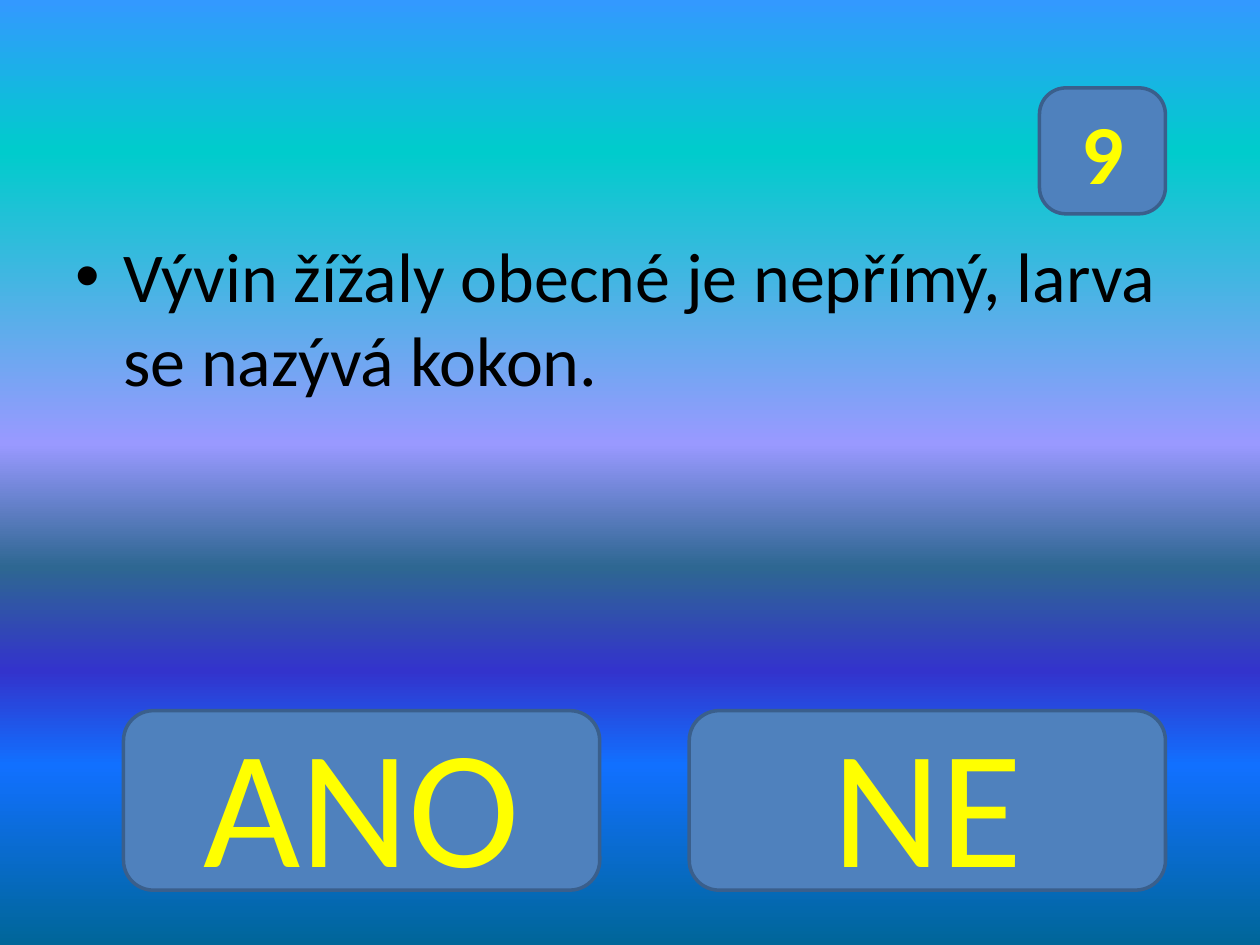
import dataclasses

import lxml.etree
import pptx
import pptx.dml.color
import pptx.enum.shapes
import pptx.enum.text
import pptx.oxml.ns
import pptx.util

WIDE, HIGH = 10, 7.5  # inches


@dataclasses.dataclass(frozen=True)
class Theme:
    font: str = "Calibri"
    ink: str = "000000"
    glow: str = "FFFF00"
    fill: str = "4F81BD"
    edge: str = "3A5F8C"
    line: float = 2
    body: int = 40
    mark: int = 48
    reply: int = 96
    sky: tuple = ((0, "3399FF"), (16, "00CCCC"), (47, "9999FF"), (60, "2E6792"),
                  (71, "3333CC"), (81, "1170FF"), (100, "006699"))


THEME = Theme()


def put(target, values):
    for name, value in values.items():
        setattr(target, name, value)


def color(code):
    return pptx.dml.color.RGBColor.from_string(code)


def add_xml(parent, tag, **values):
    return lxml.etree.SubElement(parent, pptx.oxml.ns.qn(tag), values)


def place(box):
    """Turn left, top, width and height as shares of the slide into lengths."""
    return [pptx.util.Inches(part * side) for part, side in zip(box, (WIDE, HIGH) * 2)]


def write(frame, text, size, code, bold=False):
    """Fill the first paragraph of a frame and return it."""
    frame.word_wrap = True
    par = frame.paragraphs[0]
    run = par.add_run()
    run.text = text
    put(run.font, {"name": THEME.font, "size": pptx.util.Pt(size), "bold": bold})
    run.font.color.rgb = color(code)
    return par


def paint_sky(slide):
    fill = slide.background.fill
    fill.gradient()
    fill.gradient_angle = 270
    stops = slide.element.find(".//" + pptx.oxml.ns.qn("a:gsLst"))
    for stop in list(stops):
        stops.remove(stop)
    for share, code in THEME.sky:
        stop = add_xml(stops, "a:gs", pos=str(share * 1000))
        add_xml(stop, "a:srgbClr", val=code)


def add_ask(slide, box, text):
    """Add the bulleted statement to judge."""
    frame = slide.shapes.add_textbox(*place(box)).text_frame
    par = write(frame, text, THEME.body, THEME.ink)
    props = par._p.get_or_add_pPr()
    dent = pptx.util.Inches(0.38)
    props.set("marL", str(dent))
    props.set("indent", str(-dent))
    add_xml(props, "a:buFont", typeface="Arial")
    add_xml(props, "a:buChar", char="•")


def add_key(slide, box, text, size, bold=False, curve=None):
    """Add a rounded button with a centred label."""
    kind = pptx.enum.shapes.MSO_SHAPE.ROUNDED_RECTANGLE
    key = slide.shapes.add_shape(kind, *place(box))
    key.shadow.inherit = False
    key.fill.solid()
    key.fill.fore_color.rgb = color(THEME.fill)
    key.line.color.rgb = color(THEME.edge)
    key.line.width = pptx.util.Pt(THEME.line)
    if curve is not None:
        key.adjustments[0] = curve
    key.text_frame.vertical_anchor = pptx.enum.text.MSO_ANCHOR.MIDDLE
    par = write(key.text_frame, text, size, THEME.glow, bold)
    par.alignment = pptx.enum.text.PP_ALIGN.CENTER


def add_keys(slide, box, labels, gap):
    """Share the box out among equal answer buttons."""
    left, top, width, height = box
    each = (width - gap * (len(labels) - 1)) / len(labels)
    for spot, label in enumerate(labels):
        add_key(slide, (left + spot * (each + gap), top, each, height),
                label, THEME.reply)


def main():
    deck = pptx.Presentation()
    put(deck, {"slide_width": pptx.util.Inches(WIDE),
               "slide_height": pptx.util.Inches(HIGH)})
    slide = deck.slides.add_slide(deck.slide_layouts[6])
    paint_sky(slide)
    add_ask(slide, (0.05, 0.24, 0.9, 0.46),
            "Vývin žížaly obecné je nepřímý, larva se nazývá kokon.")
    add_keys(slide, (0.098, 0.752, 0.827, 0.19), ("ANO", "NE"), 0.071)
    add_key(slide, (0.825, 0.093, 0.1, 0.1 * WIDE / HIGH), "9", THEME.mark,
            bold=True, curve=0.21)
    deck.save("out.pptx")


if __name__ == "__main__":
    main()
